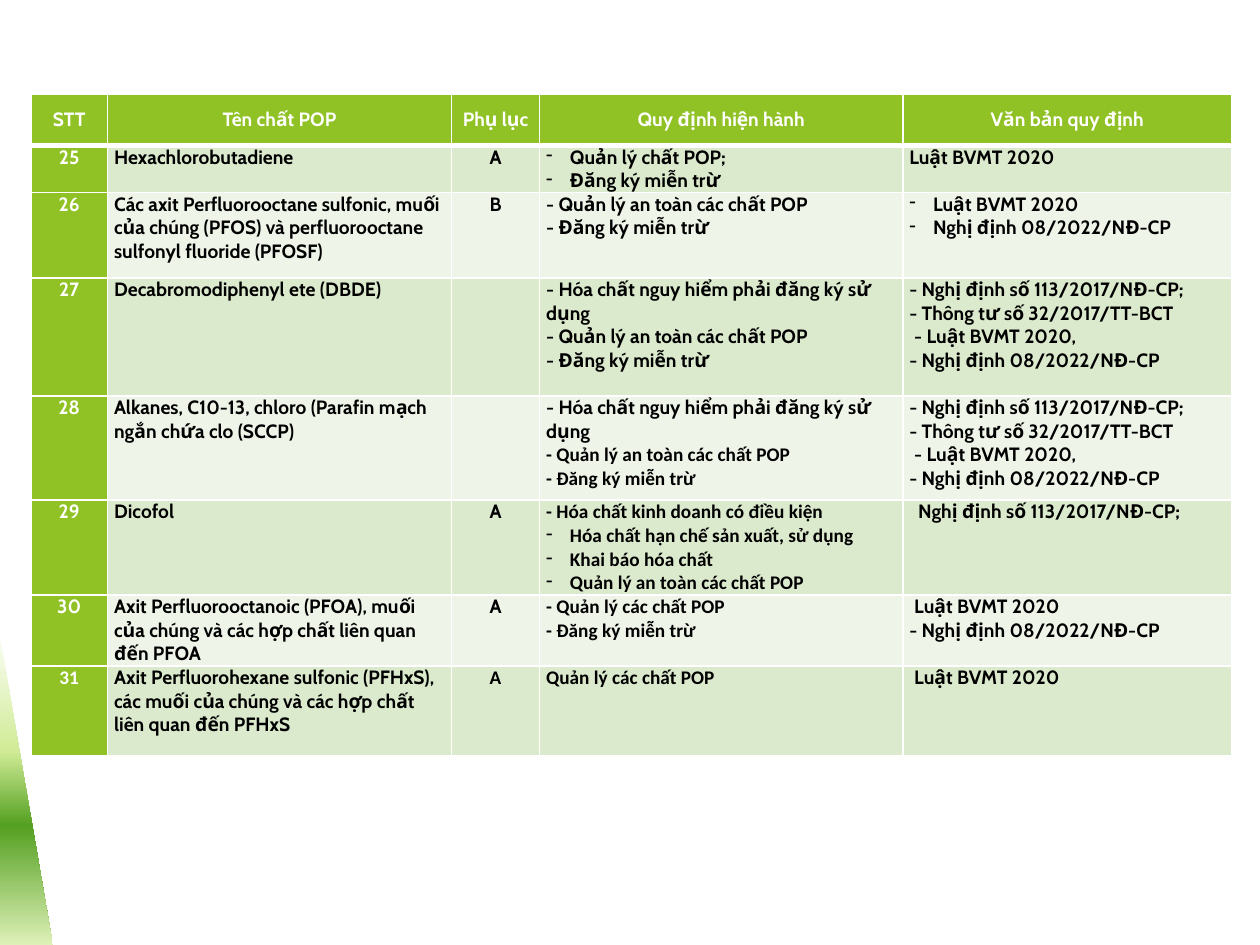
from copy import deepcopy
from dataclasses import dataclass

from lxml.etree import SubElement
from pptx import Presentation
from pptx.dml.color import RGBColor
from pptx.enum.shapes import MSO_SHAPE as Shape
from pptx.enum.text import MSO_ANCHOR as Anchor, PP_ALIGN as Align
from pptx.oxml.ns import qn
from pptx.util import Cm, Pt

COLORS = {
    "header": "90C226", "odd": "DBE9CD", "even": "EEF4E8",
    "border": "FFFFFF", "light": "FFFFFF", "dark": "000000",
}
WEDGE_STOPS = {0: "FAFDF3", 0.37: "D0EB96", 0.61: "54A021", 1: "DFF1B9"}
HEADINGS = ("STT", "Tên chất POP", "Phụ lục", "Quy định hiện hành", "Văn bản quy định")
COLUMN_WIDTHS = (1.55, 6.93, 1.78, 7.32, 6.63)
HEADER_HEIGHT = 1.02
CENTERED_COLUMNS = (0, 2)


@dataclass(frozen=True)
class Line:
    """One paragraph of a table cell."""
    text: str
    font: str = "Cabin"
    bullet: bool = False
    indent: float = 0


@dataclass(frozen=True)
class Substance:
    """One numbered POP substance with its rules and legal texts."""
    number: Line
    name: str
    annex: Line | None
    rules: tuple[Line, ...]
    laws: tuple[Line, ...]
    height: float


def calibri(text: str, bullet: bool = False) -> Line:
    """Return a line set in Calibri."""
    return Line(text, "Calibri", bullet)


HAZARDOUS = Line("- Hóa chất nguy hiểm phải đăng ký sử dụng")
SAFE_USE, EXEMPTION = "- Quản lý an toàn các chất POP", "- Đăng ký miễn trừ"
LAW_2020 = "Luật BVMT 2020"
DECREE_08 = "Nghị định 08/2022/NĐ-CP"
DECREE_113 = "Nghị định số 113/2017/NĐ-CP;"
FOUR_LAWS = (
    Line(f"- {DECREE_113}"),
    Line("- Thông tư số 32/2017/TT-BCT"),
    Line(f"- {LAW_2020},", indent=0.1),
    Line(f"- {DECREE_08}"),
)

SUBSTANCES = (
    Substance(Line("25"), "Hexachlorobutadiene", Line("A"),
              (Line("Quản lý chất POP;", bullet=True), Line("Đăng ký miễn trừ", bullet=True)),
              (Line(LAW_2020),), 0.95),
    Substance(Line("26"),
              "Các axit Perfluorooctane sulfonic, muối của chúng (PFOS) và "
              "perfluorooctane sulfonyl fluoride (PFOSF)", Line("B"),
              (Line(SAFE_USE), Line(EXEMPTION)),
              (Line(LAW_2020, bullet=True), Line(DECREE_08, bullet=True)), 1.72),
    Substance(Line("27"), "Decabromodiphenyl ete (DBDE)", None,
              (HAZARDOUS, Line(SAFE_USE), Line(EXEMPTION)), FOUR_LAWS, 2.38),
    Substance(Line("28"), "Alkanes, C10-13, chloro (Parafin mạch ngắn chứa clo (SCCP)", None,
              (HAZARDOUS, calibri(SAFE_USE), calibri(EXEMPTION)), FOUR_LAWS, 2.1),
    Substance(Line("29"), "Dicofol", Line("A"),
              (calibri("- Hóa chất kinh doanh có điều kiện"),
               calibri("Hóa chất hạn chế sản xuất, sử dụng", True),
               calibri("Khai báo hóa chất", True),
               calibri("Quản lý an toàn các chất POP", True)),
              (Line(DECREE_113, indent=0.18),), 1.91),
    Substance(Line("30"),
              "Axit Perfluorooctanoic (PFOA), muối của chúng và các hợp chất "
              "liên quan đến PFOA", Line("A"),
              (calibri("- Quản lý các chất POP"), calibri(EXEMPTION)),
              (Line(LAW_2020, indent=0.1), Line(f"- {DECREE_08}")), 1.43),
    Substance(calibri("31"),
              "Axit Perfluorohexane sulfonic (PFHxS), các muối của chúng và các "
              "hợp chất liên quan đến PFHxS", calibri("A"),
              (calibri("Quản lý các chất POP"),), (Line(LAW_2020, indent=0.1),), 1.8),
)


def rgb(name: str) -> RGBColor:
    """Look up a palette colour."""
    return RGBColor.from_string(COLORS[name])


def apply(target: object, values: dict) -> None:
    """Set every attribute in the dict of format values."""
    for attribute, value in values.items():
        setattr(target, attribute, value)


def draw_wedge(slide) -> None:
    """Draw the green gradient wedge in the lower left corner."""
    wedge = slide.shapes.add_shape(Shape.RIGHT_TRIANGLE, 0, Cm(12.85), Cm(1.07), Cm(6.22))
    wedge.shadow.inherit = False
    wedge.line.fill.background()
    fill = wedge.fill
    fill.gradient()
    fill.gradient_angle = 270
    stop_list = wedge._element.spPr.find(".//" + qn("a:gsLst"))
    for _ in range(len(WEDGE_STOPS) - len(stop_list)):
        stop_list.append(deepcopy(stop_list[0]))
    for stop, (position, color) in zip(fill.gradient_stops, WEDGE_STOPS.items()):
        stop.position = position
        stop.color.rgb = RGBColor.from_string(color)


def write_line(paragraph, line: Line, color: str, centered: bool) -> None:
    """Write one line with its indent, bullet and font."""
    properties = paragraph._p.get_or_add_pPr()
    hanging = 0.48 if line.bullet else 0
    properties.set("marL", str(Cm(line.indent + hanging)))
    properties.set("indent", str(-Cm(hanging)))
    if line.bullet:
        SubElement(properties, qn("a:buChar")).set("char", "-")
    paragraph.alignment = Align.CENTER if centered else Align.LEFT
    run = paragraph.add_run()
    run.text = line.text
    apply(run.font, {"name": line.font, "size": Pt(11), "bold": True})
    run.font.color.rgb = rgb(color)


def style_cell(cell, fill: str, top: float, bottom: float) -> None:
    """Give a cell its margins, borders and fill."""
    apply(cell, {"margin_left": Cm(0.13), "margin_right": Cm(0.13),
                 "margin_top": 0, "margin_bottom": 0})
    properties = cell._tc.get_or_add_tcPr()
    for side, width in {"L": 1, "R": 1, "T": top, "B": bottom}.items():
        border = SubElement(properties, qn(f"a:ln{side}"), w=str(Pt(width)))
        solid = SubElement(border, qn("a:solidFill"))
        SubElement(solid, qn("a:srgbClr"), val=COLORS["border"])
    cell.fill.solid()
    cell.fill.fore_color.rgb = rgb(fill)


def fill_row(table, row: int, contents: list[tuple[Line, ...]], height: float) -> None:
    """Fill and style one table row."""
    table.rows[row].height = Cm(height)
    for column, lines in enumerate(contents):
        cell = table.cell(row, column)
        strong = row == 0 or column == 0
        fill = "header" if strong else ("odd" if row % 2 else "even")
        style_cell(cell, fill, 3 if row == 1 else 1, 3 if row == 0 else 1)
        cell.vertical_anchor = Anchor.MIDDLE if row == 0 else Anchor.TOP
        frame = cell.text_frame
        for index, line in enumerate(lines):
            paragraph = frame.add_paragraph() if index else frame.paragraphs[0]
            write_line(paragraph, line, "light" if strong else "dark",
                       row == 0 or column in CENTERED_COLUMNS)


def draw_table(slide) -> None:
    """Draw the table of POP substances."""
    heights = [HEADER_HEIGHT, *(substance.height for substance in SUBSTANCES)]
    table = slide.shapes.add_table(
        len(heights), len(HEADINGS), Cm(0.62), Cm(1.91),
        Cm(sum(COLUMN_WIDTHS)), Cm(sum(heights))).table
    for column, width in zip(table.columns, COLUMN_WIDTHS):
        column.width = Cm(width)
    fill_row(table, 0, [(Line(heading),) for heading in HEADINGS], HEADER_HEIGHT)
    for row, item in enumerate(SUBSTANCES, start=1):
        annex = (item.annex,) if item.annex else ()
        fill_row(table, row, [(item.number,), (Line(item.name),), annex,
                              item.rules, item.laws], item.height)


def main() -> None:
    """Build and save the slide."""
    deck = Presentation()
    apply(deck, {"slide_width": Cm(25.4), "slide_height": Cm(19.05)})
    slide = deck.slides.add_slide(deck.slide_layouts[6])
    draw_wedge(slide)
    draw_table(slide)
    deck.save("out.pptx")


if __name__ == "__main__":
    main()
